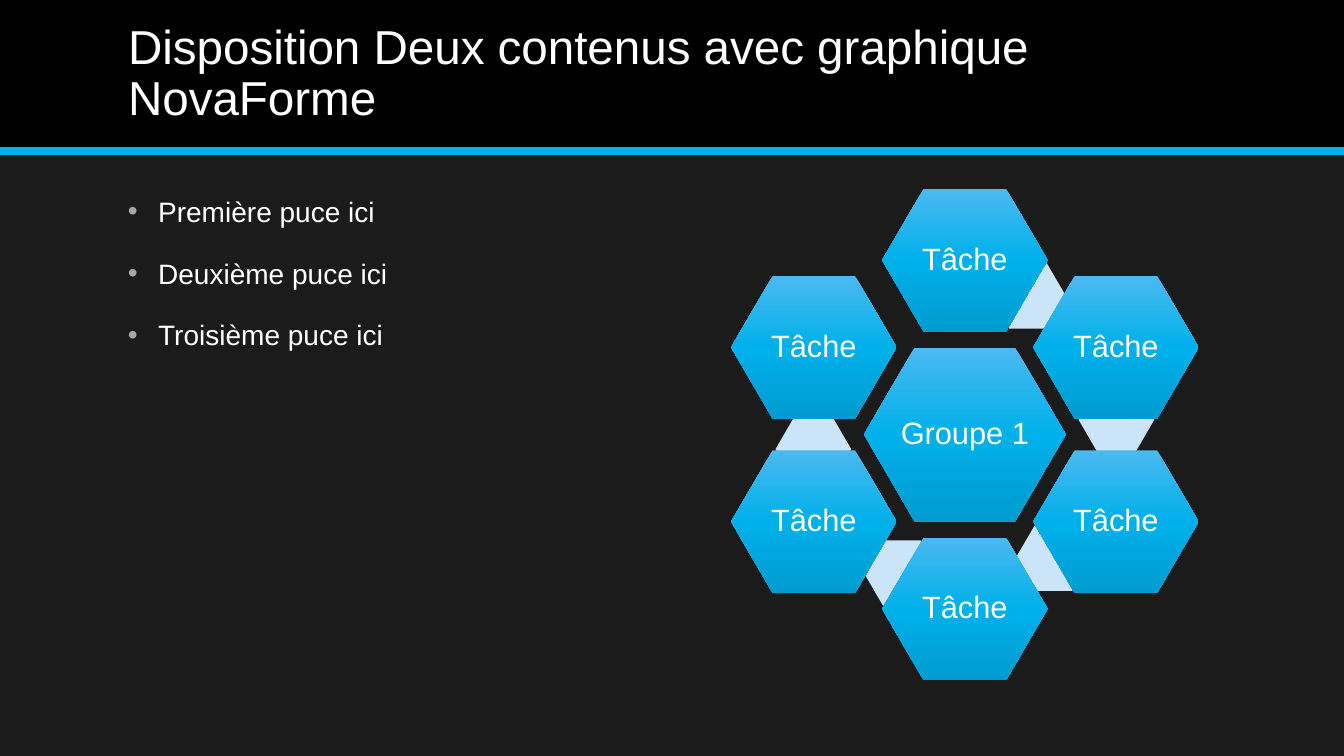
import copy
import math
from lxml import etree
from pptx import Presentation, util as u
from pptx.dml.color import RGBColor
from pptx.enum import shapes, text
from pptx.oxml import ns

TITLE = "Disposition Deux contenus avec graphique NovaForme"
BULLETS = ["Première puce ici", "Deuxième puce ici", "Troisième puce ici"]
GROUP = "Groupe\u00a01".replace("\u00a0", " ")
TASKS = ["Tâche"] * 6
COLORS = {"background": "1B1B1B", "band": "000000", "accent": "00B0EA",
          "text": "FFFFFF", "bullet": "A6A6A6", "link": "CCE4F7"}
GRADIENT = ["4BB9F0", COLORS["accent"], "009CD0"]
FONT = "Arial"

WIDTH, HEIGHT = 13.33, 7.5
BAND = HEIGHT / 5
MARGIN = 1.17
CENTER = (9.57, 4.31)
TASK_RADIUS, LINK_RADIUS = 1.73, 1.51
STEP, LINK_START = 60, 24.5
GROUP_SIZE, TASK_SIZE, LINK_SIZE = (2, 1.73), (1.64, 1.42), (0.75, 0.65)


def rgb(color):
    return RGBColor.from_string(color)


def inches(*lengths):
    return [u.Inches(length) for length in lengths]


def format_paragraph(paragraph, size):
    for run in paragraph.runs:
        run.font.name = FONT
        run.font.size = u.Pt(size)
        run.font.color.rgb = rgb(COLORS["text"])


def add_bullet(paragraph):
    properties = paragraph._p.get_or_add_pPr()
    properties.set("marL", str(u.Inches(0.3)))
    properties.set("indent", str(-u.Inches(0.3)))
    color = etree.SubElement(properties, ns.qn("a:buClr"))
    etree.SubElement(color, ns.qn("a:srgbClr")).set("val", COLORS["bullet"])
    etree.SubElement(properties, ns.qn("a:buFont")).set("typeface", FONT)
    etree.SubElement(properties, ns.qn("a:buChar")).set("char", "•")


def fill_gradient(shape):
    shape.fill.gradient()
    shape.fill.gradient_angle = 270
    stops = shape._element.spPr.find(".//" + ns.qn("a:gsLst"))
    stops.insert(1, copy.deepcopy(stops[0]))
    for index, stop in enumerate(shape.fill.gradient_stops):
        stop.color.rgb = rgb(GRADIENT[index])
        stop.position = index / (len(GRADIENT) - 1)


def around(radius, degrees):
    angle = math.radians(degrees)
    return (CENTER[0] + radius * math.sin(angle),
            CENTER[1] - radius * math.cos(angle))


def add_hexagon(slide, center, size, label=None):
    left, top = (c - s / 2 for c, s in zip(center, size))
    shape = slide.shapes.add_shape(shapes.MSO_SHAPE.HEXAGON, *inches(left, top, *size))
    shape.adjustments[0] = 0.29
    shape.adjustments[1] = 1.15
    shape.shadow.inherit = False
    shape.line.fill.background()
    if label is None:
        shape.fill.solid()
        shape.fill.fore_color.rgb = rgb(COLORS["link"])
        return
    fill_gradient(shape)
    frame = shape.text_frame
    frame.text = label
    frame.word_wrap = False
    frame.vertical_anchor = text.MSO_ANCHOR.MIDDLE
    frame.margin_left = frame.margin_right = u.Inches(0.03)
    frame.margin_top = frame.margin_bottom = u.Inches(0.03)
    paragraph = frame.paragraphs[0]
    paragraph.alignment = text.PP_ALIGN.CENTER
    paragraph.line_spacing = 0.9
    format_paragraph(paragraph, 22)


def add_header(slide):
    band = slide.shapes.add_shape(shapes.MSO_SHAPE.RECTANGLE, *inches(0, 0, WIDTH, BAND))
    band.shadow.inherit = False
    band.fill.solid()
    band.fill.fore_color.rgb = rgb(COLORS["band"])
    band.line.fill.background()
    rule = slide.shapes.add_connector(
        shapes.MSO_CONNECTOR.STRAIGHT, *inches(0, BAND, WIDTH, BAND))
    rule.line.color.rgb = rgb(COLORS["accent"])
    rule.line.width = u.Pt(6)
    etree.SubElement(rule._element.spPr, ns.qn("a:effectLst"))

    title = slide.shapes.title
    rule._element.addnext(title._element)
    title.left, title.top, title.width, title.height = inches(MARGIN, 0.14, 11, 1.2)
    frame = title.text_frame
    frame.text = TITLE
    frame.word_wrap = True
    frame.auto_size = text.MSO_AUTO_SIZE.NONE
    frame.vertical_anchor = text.MSO_ANCHOR.MIDDLE
    paragraph = frame.paragraphs[0]
    paragraph.alignment = text.PP_ALIGN.LEFT
    paragraph.line_spacing = 0.9
    format_paragraph(paragraph, 34)


def add_bullets(slide):
    frame = slide.shapes.add_textbox(*inches(MARGIN, 1.88, 5.2, 4.88)).text_frame
    frame.word_wrap = True
    frame.text = "\n".join(BULLETS)
    for paragraph in frame.paragraphs:
        paragraph.space_before = u.Pt(20)
        add_bullet(paragraph)
        format_paragraph(paragraph, 20)


def add_diagram(slide):
    for index in range(len(TASKS) - 1):
        add_hexagon(slide, around(LINK_RADIUS, LINK_START + index * STEP), LINK_SIZE)
    add_hexagon(slide, CENTER, GROUP_SIZE, GROUP)
    for index, task in enumerate(TASKS):
        add_hexagon(slide, around(TASK_RADIUS, index * STEP), TASK_SIZE, task)


def main():
    presentation = Presentation()
    presentation.slide_width, presentation.slide_height = inches(WIDTH, HEIGHT)
    slide = presentation.slides.add_slide(presentation.slide_layouts[5])
    slide.background.fill.solid()
    slide.background.fill.fore_color.rgb = rgb(COLORS["background"])
    add_header(slide)
    add_bullets(slide)
    add_diagram(slide)
    presentation.save("out.pptx")


if __name__ == "__main__":
    main()
